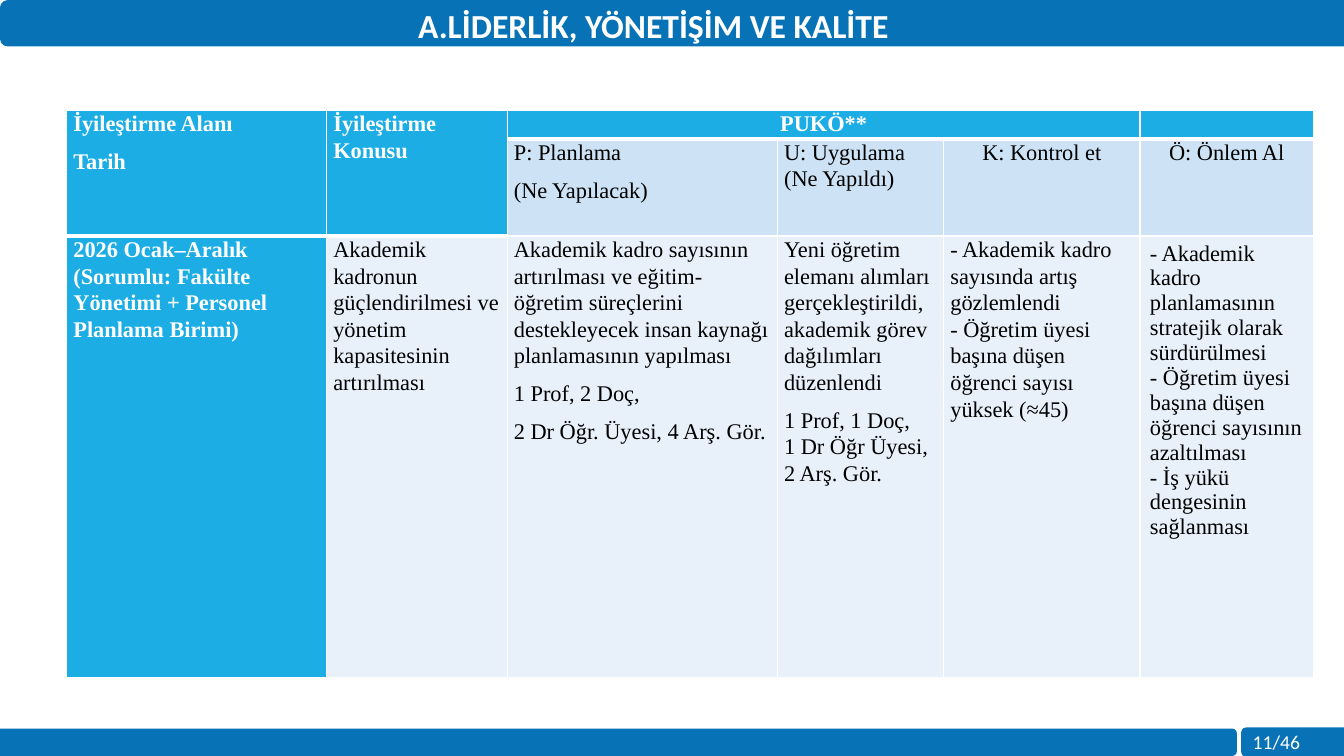
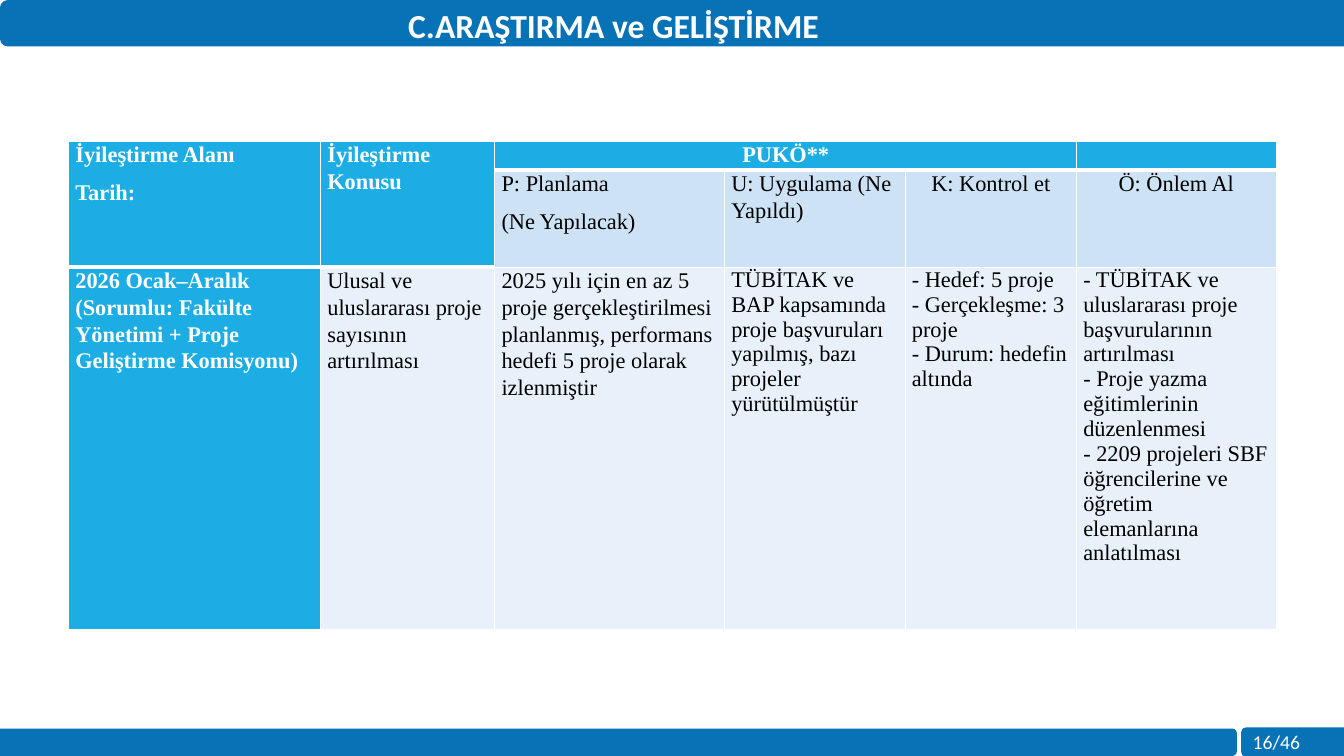
from dataclasses import dataclass

from lxml import etree
from pptx import Presentation
from pptx import util as u
from pptx.dml import color
from pptx.enum import shapes, text
from pptx.oxml import ns


@dataclass(frozen=True)
class Theme:
    band: str = "0772B5"
    header: str = "1CADE4"
    subheader: str = "CDE3F5"
    body: str = "E8F1FA"
    light: str = "FFFFFF"
    dark: str = "000000"
    title_font: str = "Calibri"
    table_font: str = "Times New Roman"
    title_size: int = 24
    table_size: int = 16
    page_size: int = 14
    thin: int = 1
    thick: int = 3


theme = Theme()
LEFT, CENTER = text.PP_ALIGN.LEFT, text.PP_ALIGN.CENTER
WIDTH, HEIGHT = 33.87, 19.05
ROW_TOPS = (0.72, 2.45)

# Bands: left, top, width, height, rotation (90 rounds the right end, 270 the left)
bands = [
    (0, 18.36, 31.17, 0.69, 90),
    (31.28, 18.33, 2.59, 0.74, 270),
    (0, 0, WIDTH, 1.17, 270),
]

# Slide contents: each body cell is a list of paragraphs
pages = [
    {
        "title": "A.LİDERLİK, YÖNETİŞİM VE KALİTE",
        "title_box": (10.29, 17.12, LEFT),
        "page": "11/46",
        "date": "Tarih",
        "origin": (1.68, 2.77),
        "columns": (6.55, 4.55, 6.81, 4.19, 4.95, 4.37),
        "body_height": 11.13,
        "single_spaced": (5,),
        "padded": (5,),
        "body": [
            ["2026 Ocak–Aralık\n(Sorumlu: Fakülte Yönetimi + Personel Planlama Birimi)"],
            ["Akademik kadronun güçlendirilmesi ve yönetim kapasitesinin artırılması"],
            ["Akademik kadro sayısının artırılması ve eğitim-öğretim süreçlerini "
             "destekleyecek insan kaynağı planlamasının yapılması",
             "1 Prof, 2 Doç,",
             "2 Dr Öğr. Üyesi, 4 Arş. Gör."],
            ["Yeni öğretim elemanı alımları gerçekleştirildi, akademik görev "
             "dağılımları düzenlendi",
             "1 Prof, 1 Doç,\n1 Dr Öğr Üyesi, 2 Arş. Gör."],
            ["- Akademik kadro sayısında artış gözlemlendi\n"
             "- Öğretim üyesi başına düşen öğrenci sayısı yüksek (≈45)"],
            ["- Akademik kadro planlamasının stratejik olarak sürdürülmesi\n"
             "- Öğretim üyesi başına düşen öğrenci sayısının azaltılması\n"
             "- İş yükü dengesinin sağlanması"],
        ],
    },
    {
        "title": "C.ARAŞTIRMA ve GELİŞTİRME",
        "title_box": (1.42, 28.09, CENTER),
        "page": "16/46",
        "date": "Tarih:",
        "origin": (1.73, 3.56),
        "columns": (6.35, 4.39, 5.79, 4.55, 4.32, 5.03),
        "body_height": 9.12,
        "single_spaced": (3, 4, 5),
        "padded": (),
        "body": [
            ["2026 Ocak–Aralık\n(Sorumlu: Fakülte Yönetimi + Proje Geliştirme Komisyonu)"],
            ["Ulusal ve uluslararası proje sayısının artırılması"],
            ["2025 yılı için en az 5 proje gerçekleştirilmesi planlanmış, "
             "performans hedefi 5 proje olarak izlenmiştir"],
            ["TÜBİTAK ve BAP kapsamında proje başvuruları yapılmış, bazı projeler "
             "yürütülmüştür"],
            ["- Hedef: 5 proje\n- Gerçekleşme: 3 proje\n- Durum: hedefin altında"],
            ["- TÜBİTAK ve uluslararası proje başvurularının artırılması\n"
             "- Proje yazma eğitimlerinin düzenlenmesi\n"
             "- 2209 projeleri SBF öğrencilerine ve öğretim elemanlarına anlatılması"],
        ],
    },
]


def write(paragraph, content, font_name, size, rgb, bold=False):
    paragraph.text = content
    for run in paragraph.runs:
        run.font.name = font_name
        run.font.size = u.Pt(size)
        run.font.bold = bold
        run.font.color.rgb = color.RGBColor.from_string(rgb)


def add_borders(cell, top, bottom):
    properties = cell._tc.get_or_add_tcPr()
    for side, width in (("L", theme.thin), ("R", theme.thin), ("T", top), ("B", bottom)):
        line = etree.SubElement(properties, ns.qn(f"a:ln{side}"), w=str(u.Pt(width)))
        fill = etree.SubElement(line, ns.qn("a:solidFill"))
        etree.SubElement(fill, ns.qn("a:srgbClr"), val=theme.light)


presentation = Presentation()
presentation.slide_width = u.Cm(WIDTH)
presentation.slide_height = u.Cm(HEIGHT)

for page in pages:
    slide = presentation.slides.add_slide(presentation.slide_layouts[6])

    # Header and footer bands, drawn upright and turned about their centres
    for left, top, width, height, rotation in bands:
        shape = slide.shapes.add_shape(
            shapes.MSO_SHAPE.ROUND_2_SAME_RECTANGLE,
            u.Cm(left + (width - height) / 2), u.Cm(top + (height - width) / 2),
            u.Cm(height), u.Cm(width))
        shape.rotation = rotation
        shape.shadow.inherit = False
        shape.fill.solid()
        shape.fill.fore_color.rgb = color.RGBColor.from_string(theme.band)
        shape.line.fill.background()

    # Title and page number
    title_left, title_width, alignment = page["title_box"]
    labels = [
        (page["title"], title_left, 0, title_width, 1.27, alignment, theme.title_size, True),
        (page["page"], 31.32, 18.26, 2.92, 0.86, LEFT, theme.page_size, False),
    ]
    for content, left, top, width, height, alignment, size, bold in labels:
        box = slide.shapes.add_textbox(u.Cm(left), u.Cm(top), u.Cm(width), u.Cm(height))
        box.text_frame.word_wrap = True
        paragraph = box.text_frame.paragraphs[0]
        write(paragraph, content, theme.title_font, size, theme.light, bold)
        paragraph.alignment = alignment

    # Table grid
    rows = [
        [["İyileştirme Alanı", page["date"]], ["İyileştirme Konusu"], ["PUKÖ**"], [], [], []],
        [[], [], ["P: Planlama", "(Ne Yapılacak)"], ["U: Uygulama (Ne Yapıldı)"],
         ["K: Kontrol et"], ["Ö: Önlem Al"]],
        page["body"],
    ]
    row_heights = (*ROW_TOPS, page["body_height"])
    left, top = page["origin"]
    table = slide.shapes.add_table(
        len(rows), len(page["columns"]), u.Cm(left), u.Cm(top),
        u.Cm(sum(page["columns"])), u.Cm(sum(row_heights))).table
    for column, width in zip(table.columns, page["columns"]):
        column.width = u.Cm(width)
    for row, height in zip(table.rows, row_heights):
        row.height = u.Cm(height)
    for first, last in (((0, 0), (1, 0)), ((0, 1), (1, 1)), ((0, 2), (0, 4))):
        table.cell(*first).merge(table.cell(*last))

    # Table cells
    for r, contents in enumerate(rows):
        for c, content in enumerate(contents):
            cell = table.cell(r, c)
            is_header = r == 0 or (r == 1 and c < 2)
            below_header = r == 1 or (r == 2 and c < 2)
            add_borders(cell, theme.thick if below_header else theme.thin,
                        theme.thick if is_header else theme.thin)
            strong = is_header or c == 0
            fill = theme.header if strong else theme.subheader if r == 1 else theme.body
            cell.fill.solid()
            cell.fill.fore_color.rgb = color.RGBColor.from_string(fill)

            padded = r == 2 and c in page["padded"]
            cell.margin_left = cell.margin_right = u.Cm(0.25 if padded else 0.17)
            cell.margin_top = cell.margin_bottom = u.Cm(0.13 if padded else 0)

            frame = cell.text_frame
            if not content:
                etree.SubElement(frame.paragraphs[0]._p, ns.qn("a:endParaRPr"),
                                 sz=str(theme.table_size * 100))
            for index, line in enumerate(content):
                paragraph = frame.add_paragraph() if index else frame.paragraphs[0]
                write(paragraph, line, theme.table_font, theme.table_size,
                      theme.light if strong else theme.dark, strong)
                centered = (r == 0 and c == 2) or (r == 1 and c > 3)
                paragraph.alignment = CENTER if centered else LEFT
                if r < 2 or c not in page["single_spaced"]:
                    paragraph.line_spacing = 1.07
                    paragraph.space_after = u.Pt(8)

presentation.save("out.pptx")
